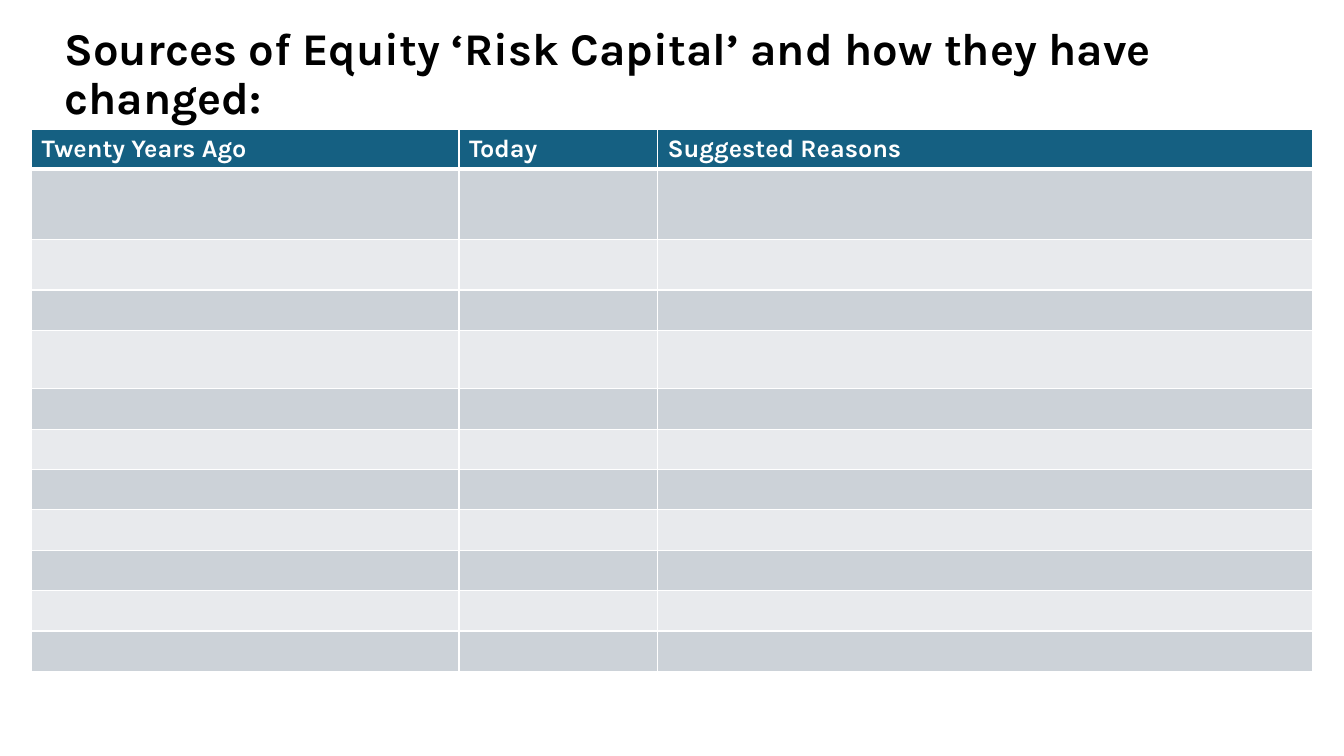
import pptx
import pptx.dml.color
import pptx.enum.text
import pptx.util
from lxml import etree

Pt = pptx.util.Pt
RGB = pptx.dml.color.RGBColor.from_string

THEME = {
    "font": "Karla",
    "title_size": 32.4,
    "header_size": 18,
    "title": "000000",
    "header_text": "FFFFFF",
    "header_fill": "156082",
    "bands": ["CCD2D8", "E8EAED"],
    "rule": "FFFFFF",
}
HEADERS = ["Twenty Years Ago", "Today", "Suggested Reasons"]
COLUMN_WIDTHS = [305.3, 141.8, 468]
ROW_HEIGHT = 28.7
TALL_ROWS = {1: 50.4, 2: 35.8, 4: 41.8}
ROW_COUNT = 12


def style_text(paragraph, text, size, color):
    run = paragraph.add_run()
    run.text = text
    formats = {"name": THEME["font"], "size": Pt(size), "bold": True}
    for attribute, value in formats.items():
        setattr(run.font, attribute, value)
    run.font.color.rgb = RGB(color)


def add_border(cell, side, width):
    """Append one cell border; call in the order L, R, T, B and before the fill."""
    namespace = "{http://schemas.openxmlformats.org/drawingml/2006/main}"
    properties = cell._tc.get_or_add_tcPr()
    line = etree.SubElement(properties, f"{namespace}ln{side}", w=str(Pt(width)))
    fill = etree.SubElement(line, f"{namespace}solidFill")
    etree.SubElement(fill, f"{namespace}srgbClr", val=THEME["rule"])


deck = pptx.Presentation()
deck.slide_width, deck.slide_height = Pt(960), Pt(540)
slide = deck.slides.add_slide(deck.slide_layouts[6])

title = slide.shapes.add_textbox(Pt(38.9), Pt(28.8), Pt(828), Pt(50.4)).text_frame
title.word_wrap = True
title.vertical_anchor = pptx.enum.text.MSO_ANCHOR.MIDDLE
title.paragraphs[0].line_spacing = 0.9
style_text(title.paragraphs[0],
           "Sources of Equity ‘Risk Capital’ and how they have changed:",
           THEME["title_size"], THEME["title"])

heights = [TALL_ROWS.get(row, ROW_HEIGHT) for row in range(ROW_COUNT)]
sources = slide.shapes.add_table(
    ROW_COUNT, len(HEADERS), Pt(22.6), Pt(92.1),
    Pt(sum(COLUMN_WIDTHS)), Pt(sum(heights))).table
for column, width in zip(sources.columns, COLUMN_WIDTHS):
    column.width = Pt(width)
for row, height in zip(sources.rows, heights):
    row.height = Pt(height)

for row_index, row in enumerate(sources.rows):
    is_header = row_index == 0
    fill = THEME["header_fill"] if is_header else THEME["bands"][(row_index - 1) % 2]
    borders = {"L": 1, "R": 1, "T": 3 if row_index == 1 else 1, "B": 3 if is_header else 1}
    for cell, header in zip(row.cells, HEADERS):
        for side, width in borders.items():
            add_border(cell, side, width)
        cell.fill.solid()
        cell.fill.fore_color.rgb = RGB(fill)
        if is_header:
            style_text(cell.text_frame.paragraphs[0], header,
                       THEME["header_size"], THEME["header_text"])

deck.save("out.pptx")
